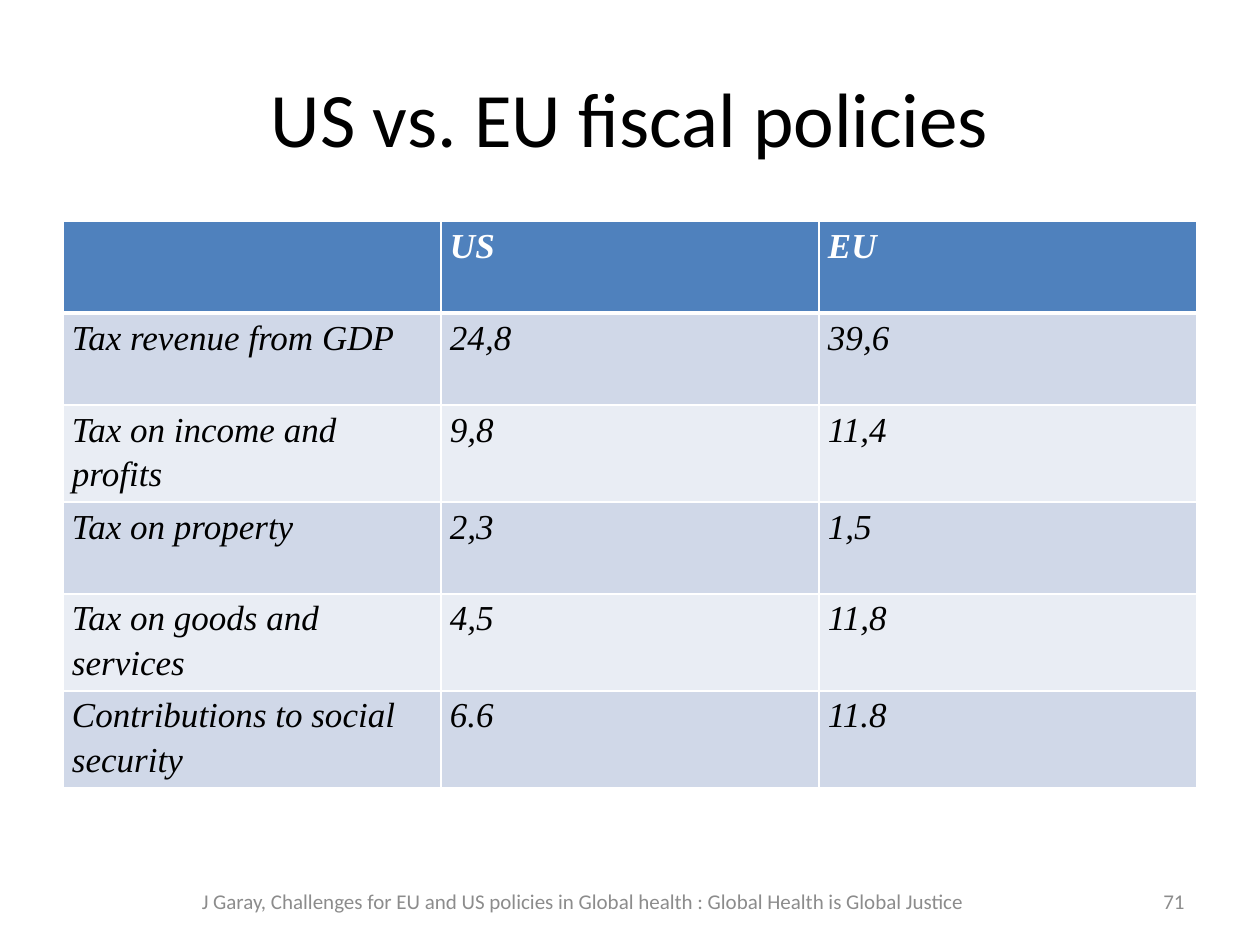
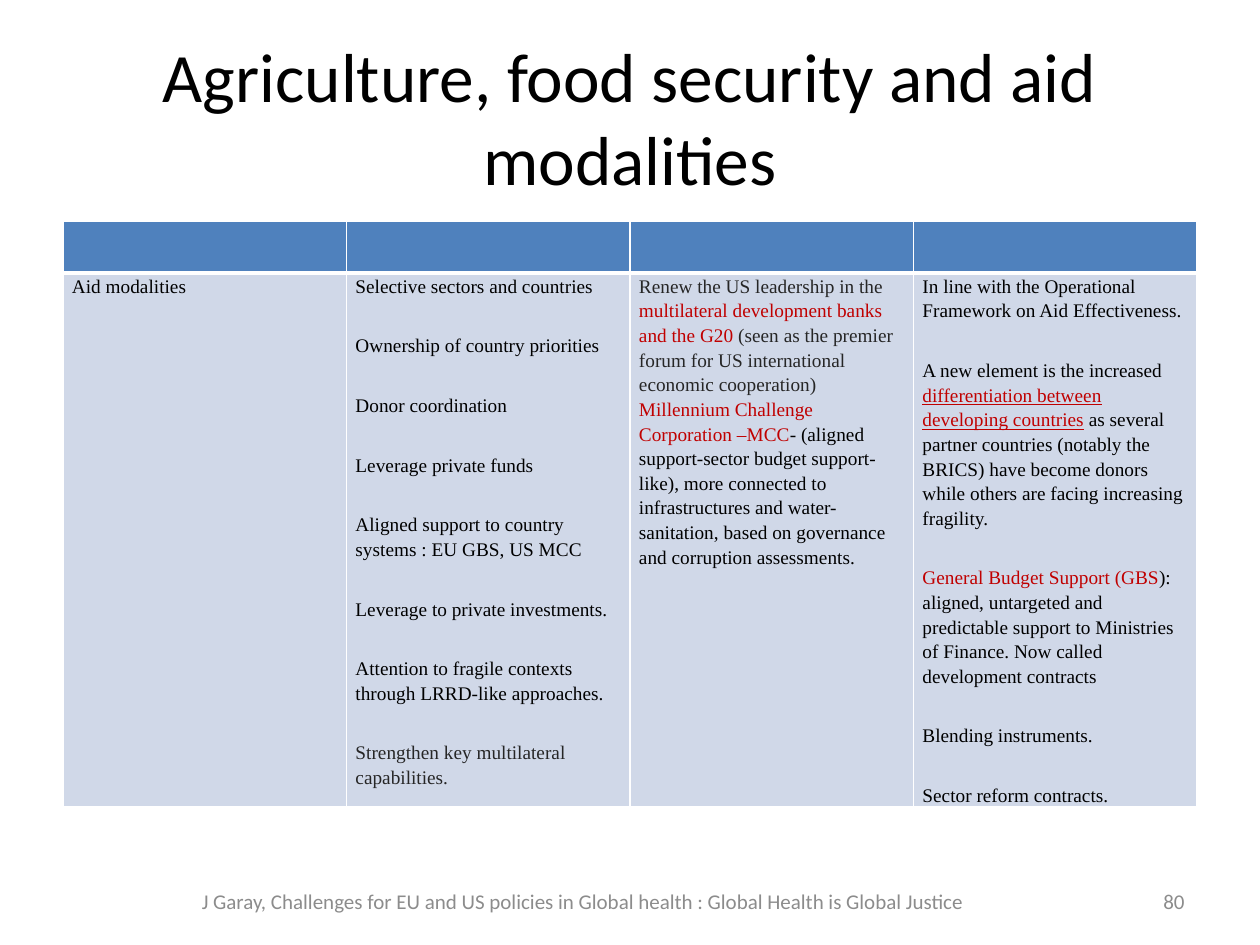
from lxml import etree
from pptx import Presentation
from pptx import util as u
from pptx.dml.color import RGBColor
from pptx.enum import text
from pptx.oxml.ns import qn

BLACK, WHITE, GREY, DARK, RED = "000000", "FFFFFF", "8C8C8C", "262626", "C00000"
HEADER_FILL, BAND_FILLS = "4F81BD", ("D0D8E8", "E9EDF4")
TITLE_FONT, TABLE_FONT = "Calibri", "Times New Roman"
FOOTER = ("J Garay, Challenges for EU and US policies in Global health : "
          "Global Health is Global Justice")

# A cell is a list of paragraphs; a paragraph is a list of (words, colour, underlined).
FISCAL_ROWS = [
    ["", "US", "EU"],
    ["Tax revenue from GDP", "24,8", "39,6"],
    ["Tax on income and profits", "9,8", "11,4"],
    ["Tax on property", "2,3", "1,5"],
    ["Tax on goods and services", "4,5", "11,8"],
    ["Contributions to social security", "6.6", "11.8"],
]
COMMON_AIMS = [
    "Selective sectors and countries",
    "Ownership of country priorities",
    "Donor coordination",
    "Leverage private funds",
    "Aligned support to country systems : EU GBS, US MCC",
    "Leverage to private investments.",
    "Attention to fragile contexts through LRRD-like approaches.",
    [("Strengthen key multilateral capabilities.", DARK, False)],
]
US_AID = [
    [("Renew the US leadership in the ", DARK, False),
     ("multilateral development banks and the G20 ", RED, False),
     ("(seen as the premier forum for US international economic cooperation)", DARK, False)],
    [("Millennium Challenge Corporation –MCC", RED, False),
     ("- (aligned support-sector budget support-like), more connected to infrastructures "
      "and water-sanitation, based on governance and corruption assessments.", BLACK, False)],
]
EU_AID = [
    "In line with the Operational Framework on Aid Effectiveness.",
    [("A new element is the increased ", BLACK, False),
     ("differentiation between developing countries", RED, True),
     (" as several partner countries (notably the BRICS) have become donors "
      "while others are facing increasing fragility.", BLACK, False)],
    [("General Budget Support (GBS", RED, False),
     ("): aligned, untargeted and predictable support to Ministries of Finance. "
      "Now called development contracts", BLACK, False)],
    "Blending instruments.",
    "Sector reform contracts.",
]
SLIDES = [
    dict(title="US vs. EU fiscal policies", title_size=44, number=71, rows=FISCAL_ROWS,
         heights=[92, 92, 97, 92, 97, 97], size=20, italic=True, tight_columns=()),
    dict(title="Agriculture, food security and aid modalities", title_size=39.6, number=80,
         rows=[[""] * 4, ["Aid modalities", COMMON_AIMS, US_AID, EU_AID]],
         heights=[52, 532], size=11, italic=False, tight_columns=(2,)),
]


def px(length):
    """Turn px (126 to the inch) into EMU."""
    return u.Emu(round(length * 914400 / 126))


def rgb(colour):
    return RGBColor.from_string(colour)


def style(font, name, size, colour):
    font.name, font.size, font.color.rgb = name, u.Pt(size), rgb(colour)


def place(shape, left, top, width, height):
    shape.left, shape.top, shape.width, shape.height = map(px, (left, top, width, height))


def add_title(slide, title, size):
    heading = slide.shapes.title
    place(heading, 63, 38, 1134, 157)
    frame = heading.text_frame
    frame.text = title
    frame.vertical_anchor = text.MSO_ANCHOR.MIDDLE
    frame.paragraphs[0].alignment = text.PP_ALIGN.CENTER
    style(frame.paragraphs[0].runs[0].font, TITLE_FONT, size, BLACK)


def add_footer_part(slide, words, left, width, alignment):
    frame = slide.shapes.add_textbox(*map(px, (left, 876, width, 50))).text_frame
    frame.word_wrap = True
    frame.vertical_anchor = text.MSO_ANCHOR.MIDDLE
    frame.text = words
    frame.paragraphs[0].alignment = alignment
    style(frame.paragraphs[0].runs[0].font, TITLE_FONT, 12, GREY)


def set_borders(cell, bottom_width):
    properties = cell._tc.get_or_add_tcPr()
    widths = {"a:lnL": 1, "a:lnR": 1, "a:lnT": 1, "a:lnB": bottom_width}
    for position, (tag, width) in enumerate(widths.items()):
        line = etree.Element(qn(tag), w=str(u.Pt(width)))
        fill = etree.SubElement(line, qn("a:solidFill"))
        etree.SubElement(fill, qn("a:srgbClr"), val=WHITE)
        properties.insert(position, line)


def write_cell(cell, content, size, colour, bold, italic, gap):
    paragraphs = content if isinstance(content, list) else [content]
    for index, pieces in enumerate(paragraphs):
        paragraph = cell.text_frame.paragraphs[0] if index == 0 else cell.text_frame.add_paragraph()
        paragraph.line_spacing = 1.15
        paragraph.space_before = u.Pt(gap if index else 0)
        paragraph.space_after = u.Pt(gap)
        if isinstance(pieces, str):
            pieces = [(pieces, colour, False)]
        for words, run_colour, underlined in pieces:
            run = paragraph.add_run()
            run.text = words
            style(run.font, TABLE_FONT, size, run_colour)
            run.font.bold, run.font.italic, run.font.underline = bold, italic, underlined


def add_comparison(slide, rows, heights, size, italic, tight_columns):
    column_count = len(rows[0])
    table = slide.shapes.add_table(len(rows), column_count, px(63), px(221),
                                   px(1134), px(sum(heights))).table
    for column in table.columns:
        column.width = px(1134 / column_count)
    for r, (contents, height) in enumerate(zip(rows, heights)):
        table.rows[r].height = px(height)
        header = r == 0
        for c, content in enumerate(contents):
            cell = table.cell(r, c)
            cell.margin_left = cell.margin_right = px(9)
            cell.margin_top = cell.margin_bottom = 0
            cell.fill.solid()
            cell.fill.fore_color.rgb = rgb(HEADER_FILL if header else BAND_FILLS[(r - 1) % 2])
            set_borders(cell, 3 if header else 1)
            if content:
                write_cell(cell, content, size, WHITE if header else BLACK, header, italic,
                           0 if c in tight_columns else 10)


def main():
    deck = Presentation()
    deck.slide_width, deck.slide_height = px(1260), px(945)
    for content in SLIDES:
        slide = deck.slides.add_slide(deck.slide_layouts[5])
        add_title(slide, content["title"], content["title_size"])
        add_comparison(slide, content["rows"], content["heights"], content["size"],
                       content["italic"], content["tight_columns"])
        add_footer_part(slide, FOOTER, 147, 872, text.PP_ALIGN.CENTER)
        add_footer_part(slide, str(content["number"]), 903, 294, text.PP_ALIGN.RIGHT)
    deck.save("out.pptx")


if __name__ == "__main__":
    main()
